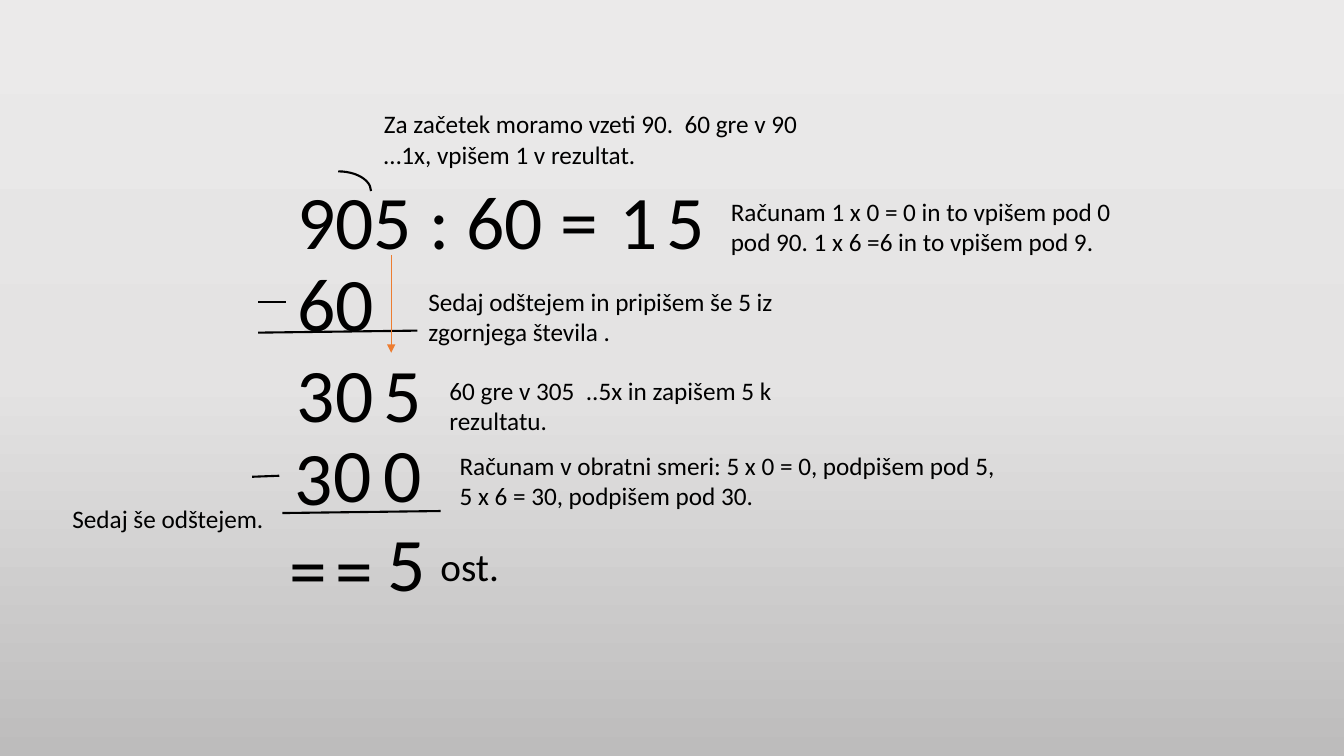
from collections import namedtuple
from copy import deepcopy
from dataclasses import dataclass

from pptx import Presentation
from pptx.dml.color import RGBColor
from pptx.enum.shapes import MSO_CONNECTOR, MSO_SHAPE
from pptx.enum.text import MSO_AUTO_SIZE
from pptx.oxml.ns import qn
from pptx.util import Pt
from lxml.etree import SubElement

PX = 9144
Box = namedtuple("Box", "x y w h")


@dataclass(frozen=True)
class Theme:
    font: str = "Calibri"
    ink: str = "000000"
    accent: str = "ED7D31"
    backdrop: tuple = ("EBEAEA", "E4E3E3", "BDBCBC")
    digit: int = 54
    remainder: int = 28
    note: int = 18
    rule: float = 1.5
    arrow: float = 1


T = Theme()


def px(*lengths):
    return [n * PX for n in lengths]


def add_text(s, text, box, size=T.note, color=T.ink):
    tf = s.shapes.add_textbox(*px(*box)).text_frame
    tf.word_wrap = True
    tf.auto_size = MSO_AUTO_SIZE.SHAPE_TO_FIT_TEXT
    r = tf.paragraphs[0].add_run()
    r.text = text
    r.font.name = T.font
    r.font.size = Pt(size)
    r.font.color.rgb = RGBColor.from_string(color)


def add_line(s, x1, y1, x2, y2, color=T.ink, width=T.rule, arrow=False):
    line = s.shapes.add_connector(MSO_CONNECTOR.STRAIGHT, *px(x1, y1, x2, y2))
    line.line.color.rgb = RGBColor.from_string(color)
    line.line.width = Pt(width)
    if arrow:
        SubElement(line.line._get_or_add_ln(), qn("a:tailEnd"), type="triangle")
    SubElement(line._element.spPr, qn("a:effectLst"))


def paint_background(s):
    fill = s.background.fill
    fill.gradient()
    fill.gradient_angle = 270
    stops = next(s._element.iter(qn("a:gsLst")))
    stops.insert(1, deepcopy(stops[0]))
    for i, (stop, color) in enumerate(zip(fill.gradient_stops, T.backdrop)):
        stop.position = i / 2
        stop.color.rgb = RGBColor.from_string(color)


def add_division(s, box):
    x, y = box.x, box.y
    digits = [
        ("1", 355, 0), ("5", 401, 0),
        ("6", 35, 81), ("0", 73, 81),
        ("3", 34, 171), ("0", 73, 171), ("5", 121, 171),
        ("3", 32, 254), ("0", 71, 251), ("0", 121, 251),
        ("=", 27, 345), ("=", 73, 345), ("5", 125, 339),
    ]
    rules = [
        (6, 162, 164, 160), (6, 132, 34, 132),
        (30, 341, 187, 339), (0, 305, 27, 304),
    ]
    add_text(s, "905 : 60 =", (x + 35, y, 320, 101), T.digit)
    for text, dx, dy in digits:
        add_text(s, text, (x + dx, y + dy, 64, 101), T.digit)
    add_text(s, "ost.", (x + 177, y + 365, 89, 57), T.remainder)
    for x1, y1, x2, y2 in rules:
        add_line(s, x + x1, y + y1, x + x2, y + y2)
    add_line(s, x + 138, y + 85, x + 138, y + 182, T.accent, T.arrow, arrow=True)

    arc = s.shapes.add_shape(MSO_SHAPE.ARC, *px(x + 53, y + 2, 65, 39))
    arc.shadow.inherit = False
    arc.fill.background()
    arc.line.color.rgb = RGBColor.from_string(T.ink)
    arc.line.width = Pt(T.rule)


def add_notes(s, box):
    notes = [
        ("Za začetek moramo vzeti 90.  60 gre v 90 …1x, vpišem 1 v rezultat.", 309, 0, 439, 71),
        ("Računam 1 x 0 = 0 in to vpišem pod 0 pod 90. 1 x 6 =6 in to vpišem pod 9.", 653, 87, 403, 71),
        ("Sedaj odštejem in pripišem še 5 iz zgornjega števila .", 353, 176, 365, 71),
        ("60 gre v 305  ..5x in zapišem 5 k rezultatu.", 374, 264, 403, 71),
        ("Računam v obratni smeri: 5 x 0 = 0, podpišem pod 5, 5 x 6 = 30, podpišem pod 30.",
         384, 339, 557, 71),
        ("Sedaj še odštejem.", 0, 391, 403, 40),
    ]
    for text, dx, dy, w, h in notes:
        add_text(s, text, (box.x + dx, box.y + dy, w, h))


def main():
    prs = Presentation()
    prs.slide_width, prs.slide_height = px(1333, 750)
    s = prs.slides.add_slide(prs.slide_layouts[6])
    paint_background(s)
    add_division(s, Box(250, 168, 465, 446))
    add_notes(s, Box(62, 103, 1056, 431))
    prs.save("out.pptx")


if __name__ == "__main__":
    main()
